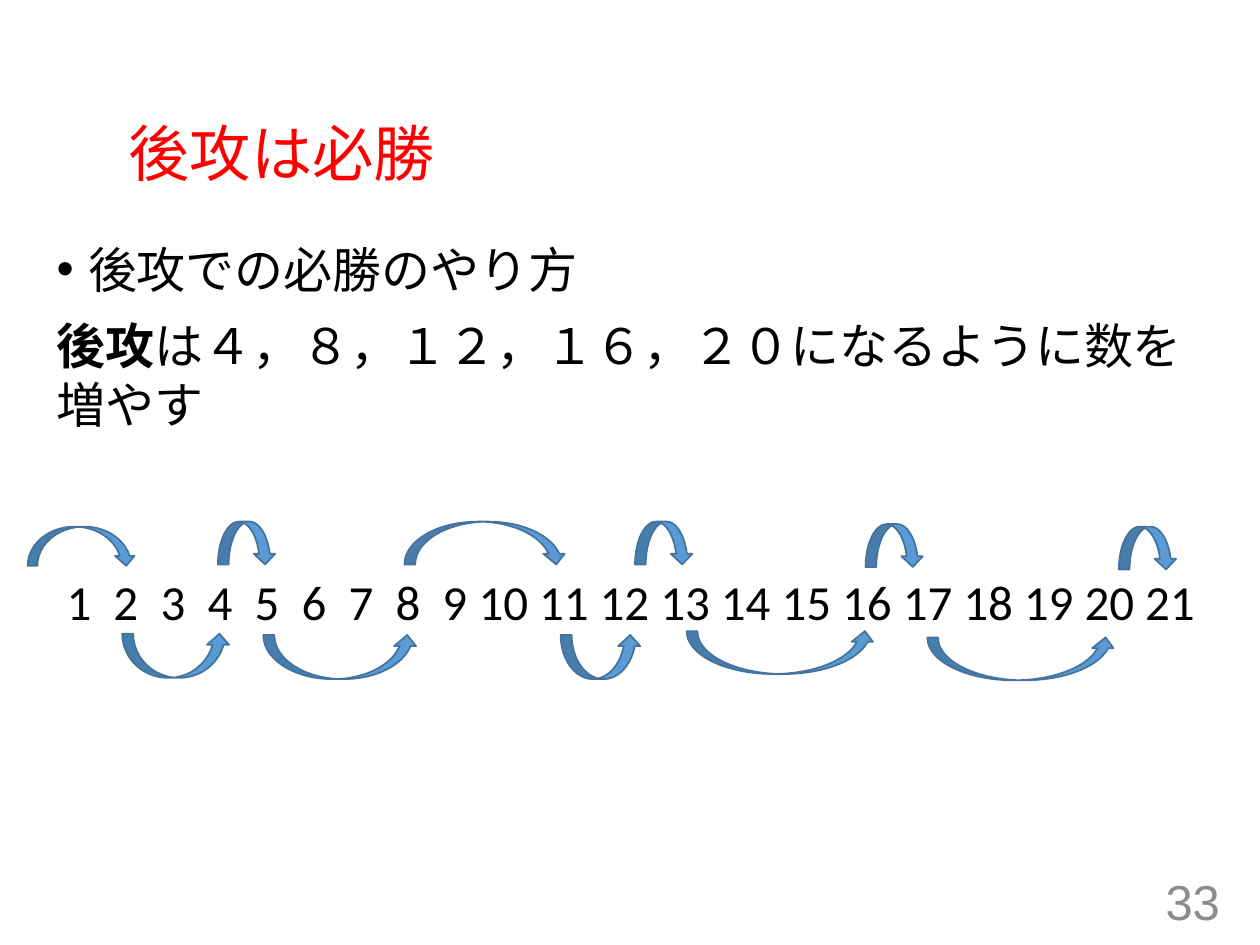
from dataclasses import dataclass

from lxml import etree
from pptx import Presentation
from pptx import util as u
from pptx.dml import color
from pptx.enum import shapes, text
from pptx.oxml import ns


@dataclass(frozen=True)
class Theme:
    title: str = "FF0000"
    ink: str = "000000"
    muted: str = "8C8C8C"
    arrow: str = "5B9BD5"
    outline: str = "43739E"
    heading_font: str = "Arial"
    number_font: str = "Calibri"
    title_size: int = 35
    body_size: int = 28


THEME = Theme()

UPPER_ARROWS = [
    (0.22, 4.18, 0.86, 0.31),
    (1.73, 4.14, 0.46, 0.34),
    (3.21, 4.14, 1.29, 0.34),
    (5.04, 4.14, 0.46, 0.34),
    (6.87, 4.16, 0.46, 0.34),
    (8.88, 4.18, 0.46, 0.34),
]
LOWER_ARROWS = [
    (0.97, 5.03, 0.86, 0.35),
    (2.09, 5.04, 1.23, 0.35),
    (4.45, 5.04, 0.64, 0.35),
    (5.45, 5.01, 1.5, 0.34),
    (7.36, 5.06, 1.5, 0.34),
]


def inches(place):
    return [u.Inches(value) for value in place]


def style(para, size, hue, face):
    para.font.size = u.Pt(size)
    para.font.name = face
    para.font.color.rgb = color.RGBColor.from_string(hue)


def add_box(page, place, anchor=text.MSO_ANCHOR.TOP):
    frame = page.shapes.add_textbox(*inches(place)).text_frame
    frame.word_wrap = True
    frame.vertical_anchor = anchor
    return frame


def set_title(page):
    title = page.shapes.title
    title.left, title.top, title.width, title.height = inches((0.92, 0.6, 8.34, 1.29))
    frame = title.text_frame
    frame.text = "後攻は必勝"
    frame.auto_size = text.MSO_AUTO_SIZE.NONE
    frame.vertical_anchor = text.MSO_ANCHOR.MIDDLE
    para = frame.paragraphs[0]
    para.alignment = text.PP_ALIGN.LEFT
    para.line_spacing = 0.9
    style(para, THEME.title_size, THEME.title, THEME.heading_font)


def add_bullet(para):
    props = para._p.get_or_add_pPr()
    props.set("marL", str(u.Inches(0.25)))
    props.set("indent", str(u.Inches(-0.25)))
    etree.SubElement(props, ns.qn("a:buFont"), typeface="Arial")
    etree.SubElement(props, ns.qn("a:buChar"), char="•")


def add_body(page):
    frame = add_box(page, (0.35, 1.85, 9.25, 4.91))
    method = frame.paragraphs[0]
    method.text = "後攻での必勝のやり方"
    add_bullet(method)
    rule = frame.add_paragraph()
    rule.space_before = u.Pt(10)
    player = rule.add_run()
    player.text = "後攻"
    player.font.bold = True
    rule.add_run().text = "は４，８，１２，１６，２０になるように数を増やす"
    for para in frame.paragraphs:
        style(para, THEME.body_size, THEME.ink, THEME.heading_font)


def number_offset(number):
    if number < 10:
        return 0.373 * (number - 1)
    return 3.27 + 0.481 * (number - 10)


def add_number_line(page):
    para = add_box(page, (0.43, 4.49, 9.3, 0.57)).paragraphs[0]
    para.text = "\t".join(str(number) for number in range(1, 22))
    stops = etree.SubElement(para._p.get_or_add_pPr(), ns.qn("a:tabLst"))
    for number in range(2, 22):
        position = u.Inches(number_offset(number))
        etree.SubElement(stops, ns.qn("a:tab"), pos=str(position), algn="l")
    style(para, THEME.body_size, THEME.ink, THEME.number_font)


def add_arrow(page, place, flipped=False):
    arrow = page.shapes.add_shape(shapes.MSO_SHAPE.CURVED_DOWN_ARROW, *inches(place))
    arrow.shadow.inherit = False
    arrow.fill.solid()
    arrow.fill.fore_color.rgb = color.RGBColor.from_string(THEME.arrow)
    arrow.line.color.rgb = color.RGBColor.from_string(THEME.outline)
    arrow.line.width = u.Pt(1)
    if flipped:
        arrow._element.spPr.get_or_add_xfrm().set("flipV", "1")


def add_page_number(page):
    frame = add_box(page, (7.53, 6.95, 2.25, 0.4), text.MSO_ANCHOR.MIDDLE)
    para = frame.paragraphs[0]
    para.text = "33"
    para.alignment = text.PP_ALIGN.RIGHT
    style(para, THEME.body_size, THEME.muted, THEME.heading_font)


def main():
    deck = Presentation()
    deck.slide_width, deck.slide_height = inches((10, 7.5))
    page = deck.slides.add_slide(deck.slide_layouts.get_by_name("Title Only"))
    set_title(page)
    add_body(page)
    add_number_line(page)
    for place in UPPER_ARROWS:
        add_arrow(page, place)
    for place in LOWER_ARROWS:
        add_arrow(page, place, flipped=True)
    add_page_number(page)
    deck.save("out.pptx")


if __name__ == "__main__":
    main()
